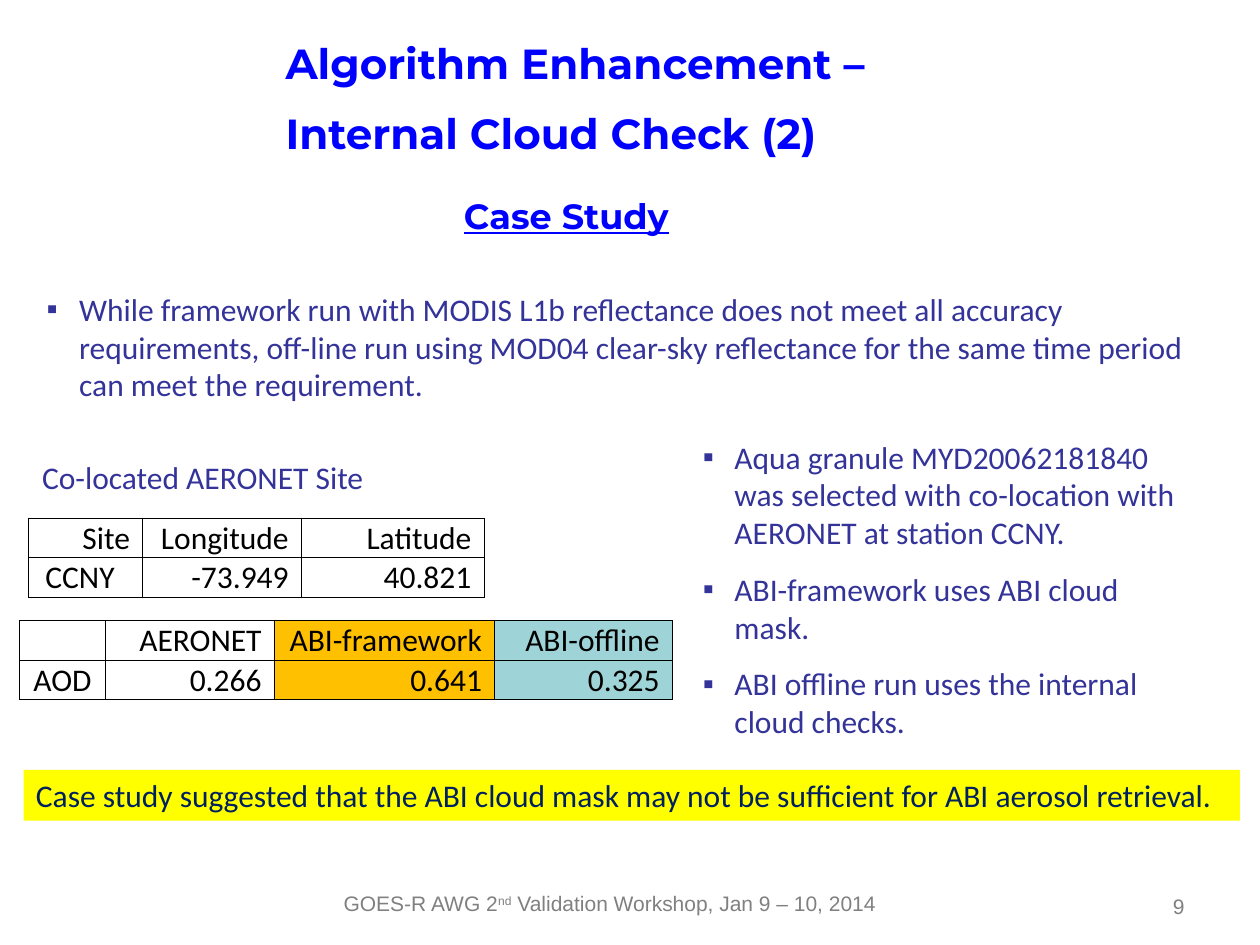
from lxml import etree
from pptx import Presentation
from pptx import util as u
from pptx.dml.color import RGBColor
from pptx.enum import shapes, text
from pptx.oxml import ns

BLUE, INDIGO, NAVY, GRAY, BLACK = "0000FF", "333399", "002060", "808080", "000000"
YELLOW, ORANGE, TEAL = "FFFF00", "FFC000", "9ED3D7"
LEFT, CENTER, RIGHT = text.PP_ALIGN.LEFT, text.PP_ALIGN.CENTER, text.PP_ALIGN.RIGHT
TOP, MIDDLE = text.MSO_ANCHOR.TOP, text.MSO_ANCHOR.MIDDLE

TITLE = ["Algorithm Enhancement –", "Internal Cloud Check (2)"]
SUMMARY = ["While framework run with MODIS L1b reflectance does not meet all accuracy "
           "requirements, off-line run using MOD04 clear-sky reflectance for the same "
           "time period can meet the requirement."]
DETAILS = ["Aqua granule MYD20062181840 was selected with co-location with AERONET "
           "at station CCNY.",
           "ABI-framework uses ABI cloud mask.",
           "ABI offline run uses the internal cloud checks."]
CONCLUSION = ("Case study suggested that the ABI cloud mask may not be sufficient "
              "for ABI aerosol retrieval.")
FOOTER = ["GOES-R AWG 2", "nd", " Validation Workshop, Jan 9 – 10, 2014"]
TABLES = [
    dict(left=16.5, top=296, widths=[65, 90.7, 104.4], fills=[None] * 3,
         rows=[["Site", "Longitude", "Latitude"], ["CCNY", "-73.949", "40.821"]]),
    dict(left=11.2, top=354.5, widths=[49, 96.5, 126, 101.5],
         fills=[None, None, ORANGE, TEAL],
         rows=[["", "AERONET", "ABI-framework", "ABI-offline"],
               ["AOD", "0.266", "0.641", "0.325"]]),
]
ROW_HEIGHT = 22.3


def color(value):
    return RGBColor.from_string(value)


def add_child(parent, tag, **attributes):
    return etree.SubElement(parent, ns.qn(tag), attributes)


def place(shape, left, top, width, height):
    shape.left, shape.top = u.Pt(left), u.Pt(top)
    shape.width, shape.height = u.Pt(width), u.Pt(height)


def style(paragraph, size, font, ink, bold=False, align=LEFT):
    paragraph.alignment = align
    for run in paragraph.runs:
        run.font.size, run.font.name, run.font.bold = u.Pt(size), font, bold
        run.font.color.rgb = color(ink)


def write(shape, lines, size, font, ink, bold=False, align=LEFT, anchor=TOP,
          indent=0, gap=0, bullet=None):
    frame = shape.text_frame
    frame.text = "\n".join(lines)
    frame.word_wrap, frame.vertical_anchor = True, anchor
    frame.auto_size = text.MSO_AUTO_SIZE.NONE
    for index, paragraph in enumerate(frame.paragraphs):
        properties = paragraph._p.get_or_add_pPr()
        properties.set("marL", str(u.Pt(indent)))
        properties.set("indent", str(-u.Pt(indent)))
        if bullet:
            add_child(properties, "a:buFont", typeface="Arial")
            add_child(properties, "a:buChar", char=bullet)
        paragraph.space_before = u.Pt(gap if index else 0)
        style(paragraph, size, font, ink, bold, align)


def add_text(slide, box, lines, *look, **options):
    shape = slide.shapes.add_textbox(*map(u.Pt, box))
    write(shape, lines, *look, **options)
    return shape


def add_borders(cell):
    properties = cell._tc.get_or_add_tcPr()
    for side in ("a:lnL", "a:lnR", "a:lnT", "a:lnB"):
        line = add_child(properties, side, w=str(u.Pt(0.5)))
        add_child(add_child(line, "a:solidFill"), "a:srgbClr", val=BLACK)


def fill_cell(cell, value, fill):
    centered = value in ("CCNY", "AOD")
    cell.margin_left = cell.margin_top = u.Pt(0.7)
    cell.margin_right, cell.margin_bottom = u.Pt(0.7 if value == "AOD" else 7.2), 0
    cell.vertical_anchor = text.MSO_ANCHOR.BOTTOM
    cell.text_frame.text = value
    style(cell.text_frame.paragraphs[0], 18, "Calibri", BLACK,
          align=CENTER if centered else RIGHT)
    add_borders(cell)
    if fill:
        cell.fill.solid()
        cell.fill.fore_color.rgb = color(fill)
    else:
        cell.fill.background()


def add_data_table(slide, left, top, widths, fills, rows):
    box = left, top, sum(widths), ROW_HEIGHT * len(rows)
    table = slide.shapes.add_table(len(rows), len(widths), *map(u.Pt, box)).table
    table.first_row = table.horz_banding = False
    for column, width in zip(table.columns, widths):
        column.width = u.Pt(width)
    for row, values in zip(table.rows, rows):
        row.height = u.Pt(ROW_HEIGHT)
        for cell, value, fill in zip(row.cells, values, fills):
            fill_cell(cell, value, fill)


def main():
    presentation = Presentation()
    presentation.slide_width, presentation.slide_height = u.Pt(720), u.Pt(540)
    slide = presentation.slides.add_slide(presentation.slide_layouts[3])
    title, summary, details = slide.placeholders

    place(title, 156, 18, 384, 76.5)
    write(title, TITLE, 24, "Montserrat", BLUE, bold=True, indent=18, gap=10.8)
    place(summary, 19.5, 162, 677, 73)
    write(summary, SUMMARY, 18, "Calibri", INDIGO, indent=18.5, bullet="▪")
    place(details, 394.5, 246.5, 295, 182)
    write(details, DETAILS, 18, "Calibri", INDIGO, indent=18, gap=10.8, bullet="▪")

    heading = add_text(slide, (258, 102, 162, 42), ["Case Study"], 20, "Montserrat",
                       BLUE, bold=True, anchor=MIDDLE)
    heading.text_frame.paragraphs[0].runs[0].font.underline = True
    add_text(slide, (17, 258, 282, 29), ["Co-located AERONET Site"], 18, "Calibri",
             INDIGO, indent=9)
    for table in TABLES:
        add_data_table(slide, **table)

    banner = slide.shapes.add_shape(shapes.MSO_SHAPE.RECTANGLE,
                                    *map(u.Pt, (13.5, 440, 695, 29)))
    banner.shadow.inherit = False
    banner.fill.solid()
    banner.fill.fore_color.rgb = color(YELLOW)
    banner.line.fill.background()
    write(banner, [CONCLUSION], 18, "Calibri", NAVY)

    footer = add_text(slide, (186, 505.5, 325, 24), FOOTER[:1], 12, "Arial", GRAY)
    paragraph = footer.text_frame.paragraphs[0]
    for part in FOOTER[1:]:
        paragraph.add_run().text = part
    style(paragraph, 12, "Arial", GRAY, align=CENTER)
    paragraph.runs[1].font._element.set("baseline", "30000")
    add_text(slide, (516, 505.5, 168, 24), ["9"], 12, "Arial", GRAY,
             align=RIGHT, anchor=MIDDLE)
    presentation.save("out.pptx")


if __name__ == "__main__":
    main()
